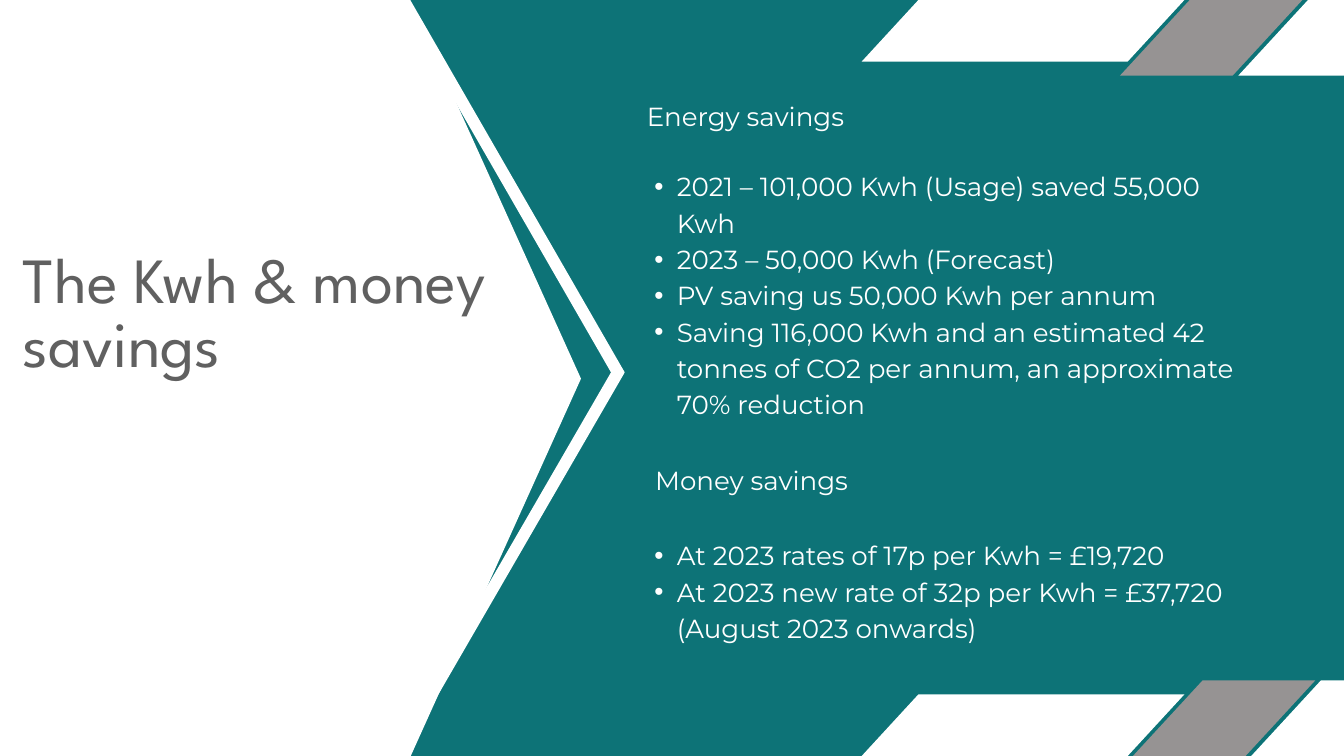
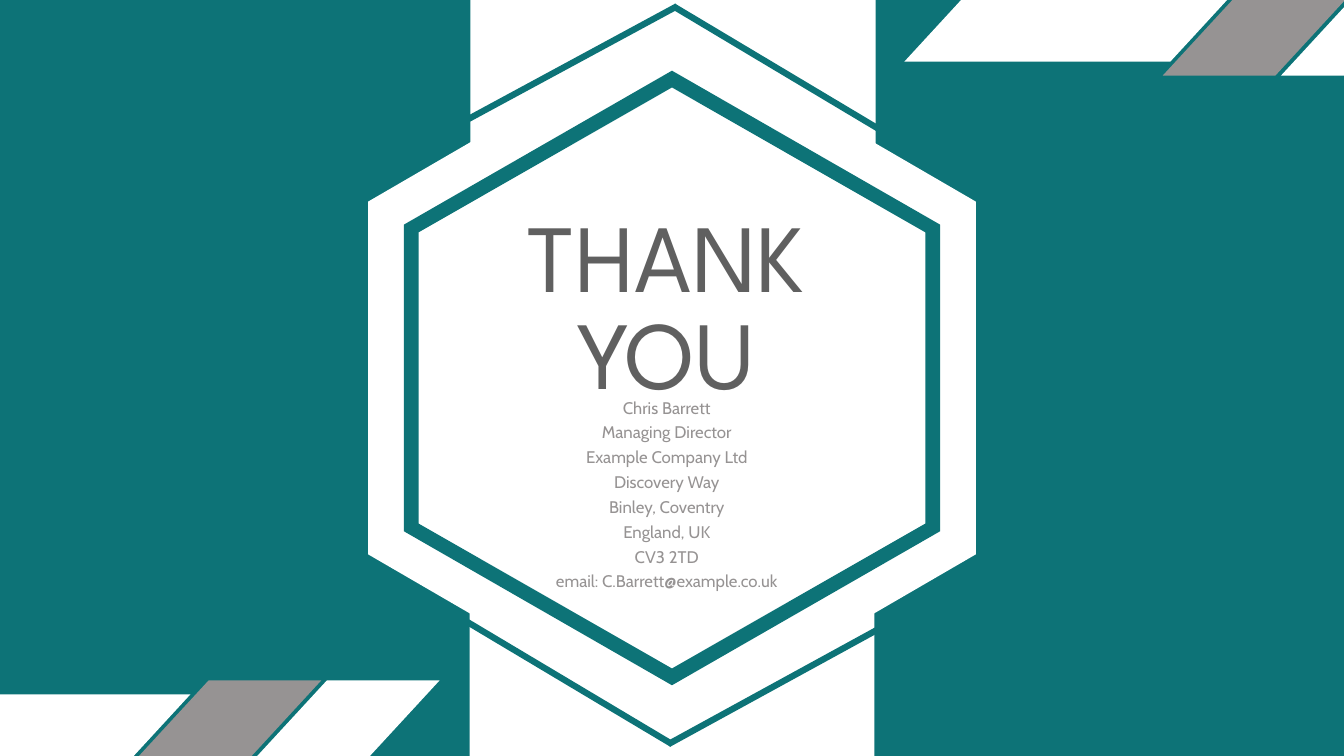
from dataclasses import dataclass

from lxml.etree import SubElement
from pptx import Presentation
from pptx.dml.color import RGBColor
from pptx.enum.shapes import MSO_CONNECTOR, MSO_SHAPE
from pptx.enum.text import PP_ALIGN
from pptx.oxml.ns import qn
from pptx.shapes.base import BaseShape
from pptx.slide import Slide
from pptx.util import Emu, Pt

EMU_PER_PX = 9525
PAGE_WIDTH, PAGE_HEIGHT = 1920, 1080
COLOURS = {
    "teal": "0D7377",
    "white": "FFFFFF",
    "stripe": "969393",
    "title": "606060",
}
BULLET_MARGIN, BULLET_HANG = 63, 32

Point = tuple[int, int]


@dataclass(frozen=True)
class Box:
    left: int
    top: int
    width: int
    height: int


@dataclass(frozen=True)
class TextStyle:
    font: str
    size: float
    leading: float
    colour: str
    centred: bool = False
    bulleted: bool = False


@dataclass(frozen=True)
class TextBlock:
    box: Box
    style: TextStyle
    lines: tuple[str, ...]


@dataclass(frozen=True)
class Stripe:
    offset: int
    width: int
    height: int
    slant: int
    rise: int
    colour: str


@dataclass(frozen=True)
class StripeGroup:
    left: int
    top: int


@dataclass(frozen=True)
class Rule:
    start: Point
    end: Point


TITLE = TextStyle("League Spartan", 69, 69, "title")
CLOSING = TextStyle("League Spartan", 103.4, 103.4, "title", centred=True)
HEADING = TextStyle("Montserrat", 28, 38.9, "white")
BULLETS = TextStyle("Montserrat", 28, 38.9, "white", bulleted=True)
CONTACT = TextStyle("Cabin", 18, 26.6, "stripe", centred=True)

STRIPES = (
    Stripe(0, 461, 88, 81, 0, "white"),
    Stripe(369, 279, 128, 118, 20, "stripe"),
    Stripe(538, 279, 128, 118, 20, "white"),
)
STRIPE_TOP, STRIPE_BOTTOM = 0, 992

SAVINGS_STRIPES = (StripeGroup(1231, STRIPE_TOP), StripeGroup(1231, STRIPE_BOTTOM))
SAVINGS_PANEL = [(-291, 541), (-32, -32), (571, -32), (830, 541), (571, 1115), (-32, 1115)]
SAVINGS_CHEVRON = (
    Rule((555, -37), (885, 536)),
    Rule((885, 528), (554, 1100)),
)
SAVINGS_TEXT = (
    TextBlock(Box(32, 360, 718, 188), TITLE, ("The Kwh & money savings",)),
    TextBlock(Box(904, 237, 865, 528), BULLETS, (
        "2021 – 101,000 Kwh (Usage) saved 55,000 Kwh",
        "2023 – 50,000 Kwh (Forecast)",
        "PV saving us 50,000 Kwh per annum",
        "Saving 116,000 Kwh and an estimated 42 tonnes of CO2 per annum, "
        "an approximate 70% reduction",
    )),
    TextBlock(Box(904, 764, 975, 319), BULLETS, (
        "At 2023 rates of 17p per Kwh = £19,720",
        "At 2023 new rate of 32p per Kwh = £37,720 (August 2023 onwards)",
    )),
    TextBlock(Box(924, 137, 767, 160), HEADING, ("Energy savings",)),
    TextBlock(Box(936, 657, 767, 103), HEADING, ("Money savings",)),
)

CLOSING_STRIPES = (StripeGroup(-189, STRIPE_BOTTOM), StripeGroup(1292, STRIPE_TOP))
CLOSING_BANDS = (Box(671, 756, 578, 361), Box(672, -37, 579, 361))
CLOSING_RULES = (
    Rule((955, 1063), (1260, 896)),
    Rule((967, 9), (660, 175)),
    Rule((960, 1063), (660, 884)),
    Rule((962, 9), (1260, 187)),
)
CLOSING_TEXT = (
    TextBlock(Box(618, 308, 668, 663), CLOSING, ("THANK YOU",)),
    TextBlock(Box(746, 561, 413, 288), CONTACT, (
        "Chris Barrett",
        "Managing Director",
        "Example Company Ltd",
        "Discovery Way",
        "Binley, Coventry",
        "England, UK",
        "CV3 2TD",
        "email: C.Barrett@example.co.uk",
    )),
)


def px(length: int) -> Emu:
    return Emu(length * EMU_PER_PX)


def colour(name: str) -> RGBColor:
    return RGBColor.from_string(COLOURS[name])


def paint(shape: BaseShape, fill: str) -> None:
    shape.shadow.inherit = False
    shape.fill.solid()
    shape.fill.fore_color.rgb = colour(fill)
    shape.line.fill.background()


def draw_outline(page: Slide, fill: str, *contours: list[Point]) -> None:
    first, *others = contours
    builder = page.shapes.build_freeform(*first[0], scale=EMU_PER_PX)
    builder.add_line_segments(first[1:], close=True)
    for contour in others:
        builder.move_to(*contour[0])
        builder.add_line_segments(contour[1:], close=True)
    paint(builder.convert_to_shape(), fill)


def draw_rule(page: Slide, rule: Rule, name: str, width: float) -> None:
    connector = page.shapes.add_connector(
        MSO_CONNECTOR.STRAIGHT, *map(px, rule.start + rule.end)
    )
    connector.line.color.rgb = colour(name)
    connector.line.width = Pt(width)
    SubElement(connector.line._get_or_add_ln().getparent(), qn("a:effectLst"))


def draw_band(page: Slide, box: Box) -> None:
    band = page.shapes.add_shape(
        MSO_SHAPE.RECTANGLE, px(box.left), px(box.top), px(box.width), px(box.height)
    )
    paint(band, "white")


def draw_stripes(page: Slide, group: StripeGroup) -> None:
    for stripe in STRIPES:
        left, top = group.left + stripe.offset, group.top - stripe.rise
        right, bottom = left + stripe.width, top + stripe.height
        draw_outline(page, stripe.colour, [
            (left + stripe.slant, top),
            (right, top),
            (right - stripe.slant, bottom),
            (left, bottom),
        ])


def draw_text(page: Slide, block: TextBlock) -> None:
    box, style = block.box, block.style
    frame = page.shapes.add_textbox(
        px(box.left), px(box.top), px(box.width), px(box.height)
    ).text_frame
    frame.word_wrap = True
    frame.margin_left = frame.margin_top = frame.margin_right = frame.margin_bottom = 0
    for index, line in enumerate(block.lines):
        para = frame.add_paragraph() if index else frame.paragraphs[0]
        para.line_spacing = Pt(style.leading)
        if style.centred:
            para.alignment = PP_ALIGN.CENTER
        if style.bulleted:
            para.level = 1
            properties = para._p.get_or_add_pPr()
            properties.set("marL", str(px(BULLET_MARGIN)))
            properties.set("indent", str(px(-BULLET_HANG)))
            SubElement(properties, qn("a:buFont"), typeface="Arial")
            SubElement(properties, qn("a:buChar"), char="•")
        span = para.add_run()
        span.text = line
        span.font.name = style.font
        span.font.size = Pt(style.size)
        span.font.color.rgb = colour(style.colour)


def hexagon(half_width: int, half_height: int, shoulder: int) -> list[Point]:
    centre, middle = PAGE_WIDTH // 2, PAGE_HEIGHT // 2
    left, right = centre - half_width, centre + half_width
    return [
        (centre, middle - half_height),
        (right, middle - shoulder),
        (right, middle + shoulder),
        (centre, middle + half_height),
        (left, middle + shoulder),
        (left, middle - shoulder),
    ]


def add_page(deck: Presentation) -> Slide:
    page = deck.slides.add_slide(deck.slide_layouts[6])
    page.background.fill.solid()
    page.background.fill.fore_color.rgb = colour("teal")
    return page


def build_savings(page: Slide) -> None:
    draw_outline(page, "white", SAVINGS_PANEL)
    for rule in SAVINGS_CHEVRON:
        draw_rule(page, rule, "white", 12.75)
    for group in SAVINGS_STRIPES:
        draw_stripes(page, group)
    for block in SAVINGS_TEXT:
        draw_text(page, block)


def build_closing(page: Slide) -> None:
    draw_outline(page, "white", hexagon(434, 504, 252))
    for band in CLOSING_BANDS:
        draw_band(page, band)
    draw_outline(page, "teal", hexagon(383, 439, 219), hexagon(362, 415, 208)[::-1])
    for rule in CLOSING_RULES:
        draw_rule(page, rule, "teal", 6.75)
    for group in CLOSING_STRIPES:
        draw_stripes(page, group)
    for block in CLOSING_TEXT:
        draw_text(page, block)


def main() -> None:
    deck = Presentation()
    deck.slide_width, deck.slide_height = px(PAGE_WIDTH), px(PAGE_HEIGHT)
    build_savings(add_page(deck))
    build_closing(add_page(deck))
    deck.save("out.pptx")


if __name__ == "__main__":
    main()
